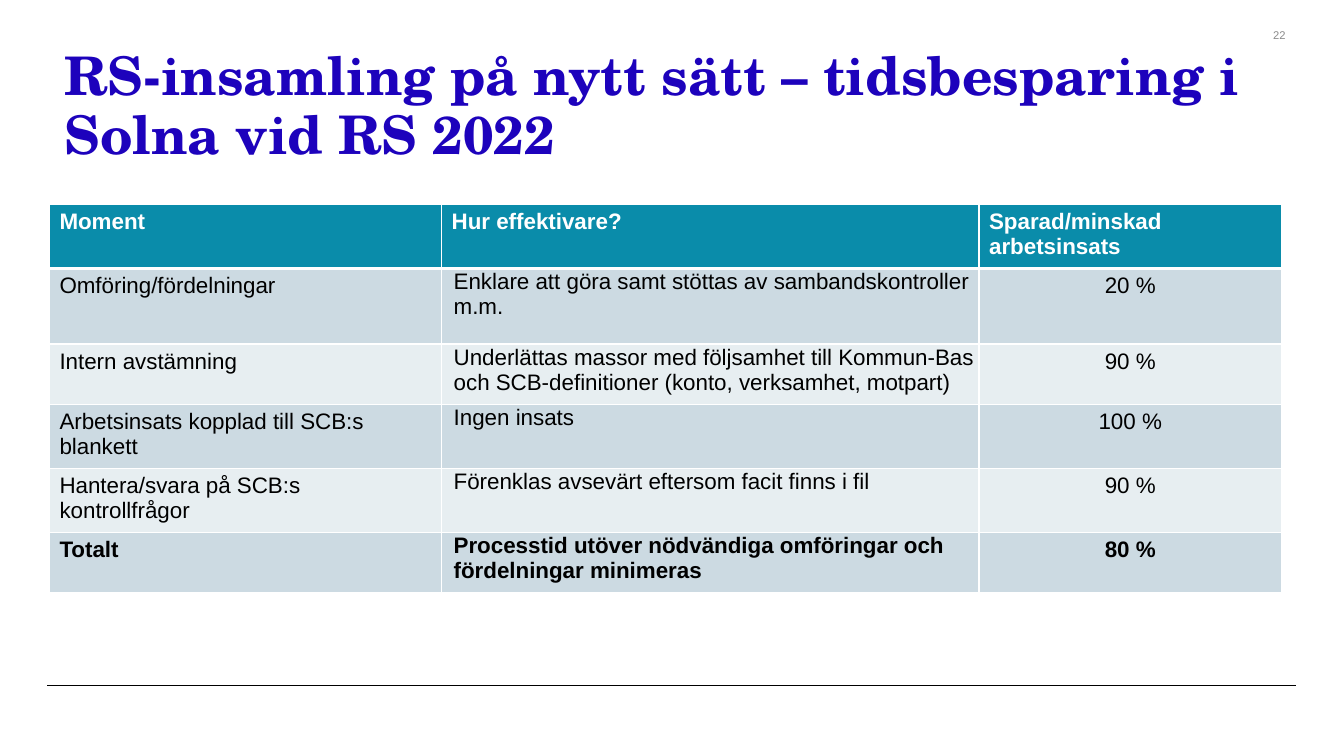
from lxml.etree import SubElement
from pptx import Presentation
from pptx.dml.color import RGBColor
from pptx.enum.shapes import MSO_CONNECTOR
from pptx.enum.text import MSO_ANCHOR, MSO_AUTO_SIZE, PP_ALIGN
from pptx.oxml.ns import qn
from pptx.util import Inches, Pt

COLORS = {
    "title": "1D02BC", "number": "8C8C8C", "rule": "000000", "text": "000000",
    "header": "0A8CAA", "header_text": "FFFFFF", "border": "FFFFFF",
    "band_dark": "CCDAE2", "band_light": "E7EEF1",
}
ROWS = [
    ("Moment", "Hur effektivare?", "Sparad/minskad arbetsinsats"),
    ("Omföring/fördelningar",
     "Enklare att göra samt stöttas av sambandskontroller m.m.", "20 %"),
    ("Intern avstämning",
     "Underlättas massor med följsamhet till Kommun-Bas och SCB-definitioner "
     "(konto, verksamhet, motpart)", "90 %"),
    ("Arbetsinsats kopplad till SCB:s blankett", "Ingen insats", "100 %"),
    ("Hantera/svara på SCB:s kontrollfrågor",
     "Förenklas avsevärt eftersom facit finns i fil", "90 %"),
    ("Totalt", "Processtid utöver nödvändiga omföringar och fördelningar minimeras",
     "80 %"),
]
COLUMN_WIDTHS = [3.89, 5.33, 3]
ROW_HEIGHTS = [0.59, 0.75, 0.6, 0.6, 0.6, 0.6]


def set_font(para, name, size, color, bold=False):
    para.font.name = name
    para.font.size = Pt(size)
    para.font.bold = bold
    para.font.color.rgb = RGBColor.from_string(COLORS[color])


def set_borders(cell, top, bottom):
    """Draw all four cell borders; top and bottom are widths in points."""
    properties = cell._tc.get_or_add_tcPr()
    for side, width in (("L", 1), ("R", 1), ("T", top), ("B", bottom)):
        line = SubElement(properties, qn("a:ln" + side), w=str(Pt(width)))
        fill = SubElement(line, qn("a:solidFill"))
        SubElement(fill, qn("a:srgbClr"), val=COLORS["border"])


deck = Presentation()
deck.slide_width, deck.slide_height = Inches(13.33), Inches(7.5)
page = deck.slides.add_slide(deck.slide_layouts[5])

footer_rule = page.shapes.add_connector(
    MSO_CONNECTOR.STRAIGHT, Inches(0.47), Inches(6.8), Inches(12.85), Inches(6.8))
footer_rule.line.color.rgb = RGBColor.from_string(COLORS["rule"])
footer_rule.line.width = Pt(1)
SubElement(footer_rule._element.spPr, qn("a:effectLst"))

title = page.shapes.title
title.left, title.top = Inches(0.54), Inches(1.02)
title.width, title.height = Inches(11.94), Inches(0.67)
title.text_frame.text = "RS-insamling på nytt sätt – tidsbesparing i Solna vid RS 2022"
title.text_frame.auto_size = MSO_AUTO_SIZE.NONE
title.text_frame.vertical_anchor = MSO_ANCHOR.BOTTOM
para = title.text_frame.paragraphs[0]
para.alignment = PP_ALIGN.LEFT
para.line_spacing = Pt(42)
set_font(para, "TeX Gyre Schola", 38, "title", bold=True)

number_box = page.shapes.add_textbox(Inches(12.3), Inches(0.21), Inches(0.55), Inches(0.27))
number_box.text_frame.word_wrap = True
number_box.text_frame.vertical_anchor = MSO_ANCHOR.MIDDLE
para = number_box.text_frame.paragraphs[0]
para.text = "22"
para.alignment = PP_ALIGN.RIGHT
set_font(para, "Arial", 8, "number")

table = page.shapes.add_table(
    len(ROWS), len(COLUMN_WIDTHS), Inches(0.49), Inches(2.03),
    Inches(sum(COLUMN_WIDTHS)), Inches(sum(ROW_HEIGHTS))).table
table.first_row = table.horz_banding = False
for column, width in zip(table.columns, COLUMN_WIDTHS):
    column.width = Inches(width)
for row, height in zip(table.rows, ROW_HEIGHTS):
    row.height = Inches(height)

for row_index, texts in enumerate(ROWS):
    is_header = row_index == 0
    is_total = row_index == len(ROWS) - 1
    band = "band_dark" if row_index % 2 else "band_light"
    for column_index, text in enumerate(texts):
        cell = table.cell(row_index, column_index)
        set_borders(cell, top=3 if row_index == 1 else 1, bottom=3 if is_header else 1)
        cell.fill.solid()
        cell.fill.fore_color.rgb = RGBColor.from_string(
            COLORS["header" if is_header else band])
        cell.text = text
        para = cell.text_frame.paragraphs[0]
        set_font(para, "Arial", 16, "header_text" if is_header else "text",
                 bold=is_header or is_total)
        if not is_header and column_index == 1:
            cell.margin_left = Inches(0.12)
            cell.margin_top = cell.margin_right = Inches(0.01)
            cell.margin_bottom = 0
        if not is_header and column_index == 2:
            para.alignment = PP_ALIGN.CENTER

deck.save("out.pptx")
